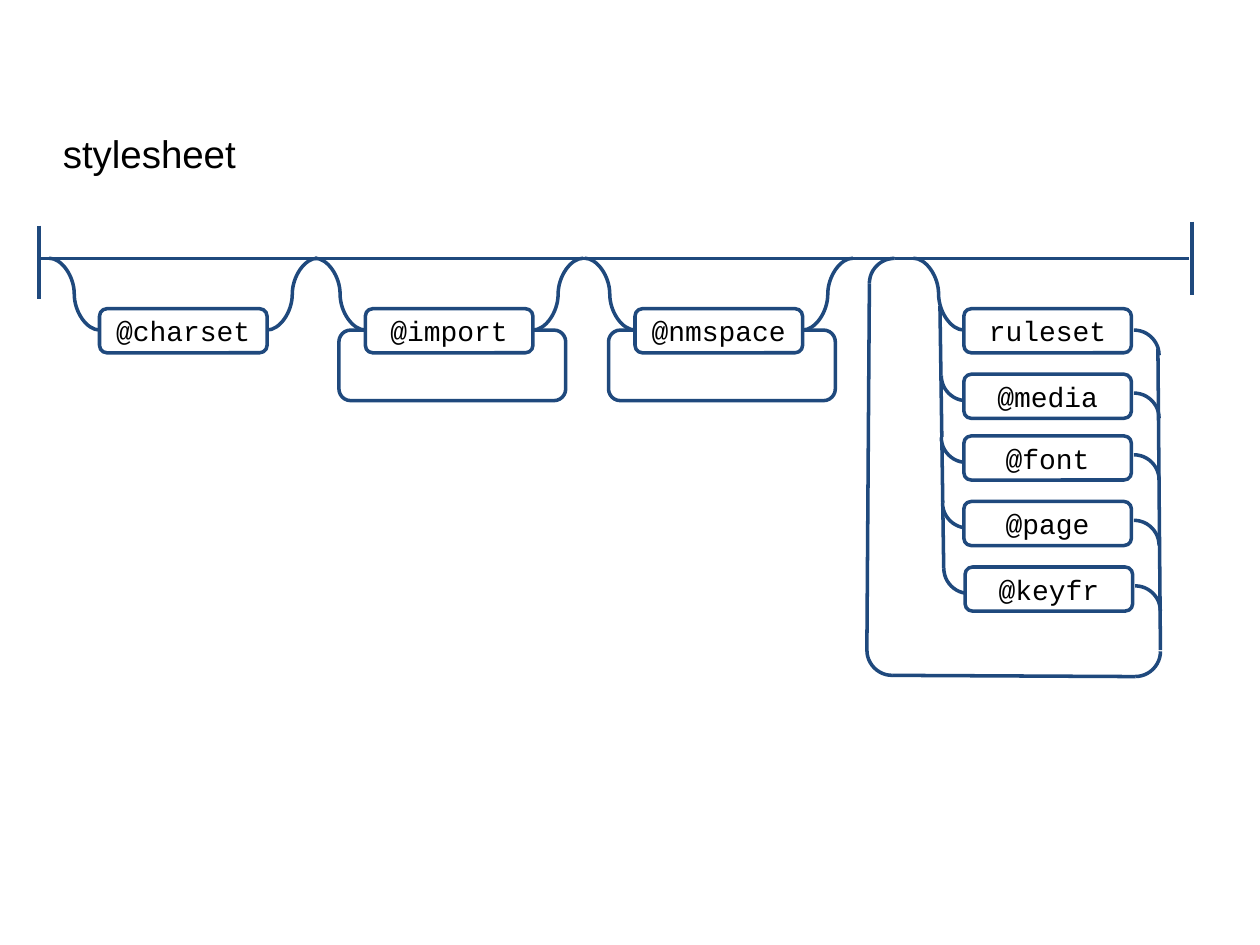
from lxml import etree
from pptx import Presentation
from pptx.dml.color import RGBColor
from pptx.enum.shapes import MSO_CONNECTOR, MSO_SHAPE
from pptx.enum.text import MSO_ANCHOR, MSO_AUTO_SIZE, PP_ALIGN
from pptx.oxml.ns import qn
from pptx.util import Inches, Pt

STRAIGHT, CURVE = MSO_CONNECTOR.STRAIGHT, MSO_CONNECTOR.CURVE
ROUNDED, ARC = MSO_SHAPE.FLOWCHART_ALTERNATE_PROCESS, MSO_SHAPE.ARC
CENTER, MIDDLE = PP_ALIGN.CENTER, MSO_ANCHOR.MIDDLE
FIT_TEXT = MSO_AUTO_SIZE.SHAPE_TO_FIT_TEXT

COLUMNS, ROWS = 100, 75
# Quarter-circle corners, as clockwise turns of the top-right one
TOP_RIGHT, BOTTOM_RIGHT, BOTTOM_LEFT, TOP_LEFT = 0, 90, 180, 270

RAIL, ENTRY = 20.5, 26.2
TERM_TOP, TERM_WIDTH, TERM_HEIGHT = 24.5, 13.3, 3.5
BEND, CORNER = 4, 4


def color(value):
    return RGBColor.from_string(value)


class RailroadDiagram:
    ink, paper, text_color = "1F497D", "FFFFFF", "000000"
    label_font, term_font = "Arial", "Courier New"

    def __init__(self, presentation):
        self.slide = presentation.slides.add_slide(presentation.slide_layouts[6])
        self.cell_width = presentation.slide_width / COLUMNS
        self.cell_height = presentation.slide_height / ROWS

    def place(self, column, row):
        return round(column * self.cell_width), round(row * self.cell_height)

    def style_text(self, paragraph, text, font, size):
        paragraph.text = text
        paragraph.font.name = font
        paragraph.font.size = Pt(size)
        paragraph.font.color.rgb = color(self.text_color)

    def outline(self, kind, left, top, width, height):
        shape = self.slide.shapes.add_shape(
            kind, *self.place(left, top), *self.place(width, height))
        shape.shadow.inherit = False
        shape.fill.solid()
        shape.fill.fore_color.rgb = color(self.paper)
        shape.line.color.rgb = color(self.ink)
        shape.line.width = Pt(2)
        return shape

    def term(self, text, left, top):
        box = self.outline(ROUNDED, left, top, TERM_WIDTH, TERM_HEIGHT)
        box.text_frame.vertical_anchor = MIDDLE
        paragraph = box.text_frame.paragraphs[0]
        paragraph.alignment = CENTER
        self.style_text(paragraph, text, self.term_font, 16)

    def corner(self, turn, left, top):
        self.outline(ARC, left, top, CORNER, CORNER).rotation = turn

    def track(self, start, end, kind=STRAIGHT, weight=2):
        connector = self.slide.shapes.add_connector(
            kind, *self.place(*start), *self.place(*end))
        connector.line.color.rgb = color(self.ink)
        connector.line.width = Pt(weight)
        etree.SubElement(connector._element.spPr, qn("a:effectLst"))

    def branch(self, column, direction):
        """Bend from a term's side up to the rail: -1 leftwards, 1 rightwards."""
        self.track((column, ENTRY), (column + direction * BEND, RAIL), CURVE)

    def optional_term(self, text, left, repeats):
        """Term below the rail that can be skipped and, if it repeats, looped."""
        if repeats:
            self.outline(ROUNDED, left - 2.1, ENTRY, 18, 5.6)
        self.term(text, left, TERM_TOP)
        self.branch(left, -1)
        self.branch(left + TERM_WIDTH, 1)

    def label(self, text, left, top, width, height):
        box = self.slide.shapes.add_textbox(
            *self.place(left, top), *self.place(width, height))
        box.text_frame.word_wrap = True
        box.text_frame.auto_size = FIT_TEXT
        self.style_text(box.text_frame.paragraphs[0], text, self.label_font, 22)


def main():
    presentation = Presentation()
    presentation.slide_width, presentation.slide_height = Inches(10), Inches(7.5)
    diagram = RailroadDiagram(presentation)

    diagram.label("stylesheet", 4, 9.8, 58.9, 4.7)

    for text, left, repeats in (
        ("@charset", 7.9, False),
        ("@import", 29, True),
        ("@nmspace", 50.4, True),
    ):
        diagram.optional_term(text, left, repeats)

    diagram.track((3.1, RAIL), (94.4, RAIL), weight=1.5)
    for column, top in ((3.1, 17.9), (94.6, 17.6)):
        diagram.track((column, top), (column, top + 5.8))

    # Choice of body statements, each entered from the left stem
    diagram.track((74.6, 24.3), (74.9, 45.1))
    diagram.branch(76.5, -1)
    diagram.term("ruleset", 76.5, TERM_TOP)
    diagram.corner(TOP_RIGHT, 88, ENTRY)
    for text, left, top, entry in (
        ("@media", 76.5, 29.7, 74.7),
        ("@font", 76.5, 34.6, 74.7),
        ("@page", 76.5, 39.8, 74.8),
        ("@keyfr", 76.6, 45, 74.9),
    ):
        diagram.corner(BOTTOM_LEFT, entry, top - 1.9)
        diagram.term(text, left, top)
        diagram.corner(TOP_RIGHT, left + 11.5, top + 1.5)

    # Way back from the choice to the rail
    diagram.track((91.9, 27.7), (92.1, 51.6))
    diagram.corner(BOTTOM_RIGHT, 88.1, 49.7)
    diagram.track((90.1, 53.7), (70.8, 53.6))
    diagram.corner(BOTTOM_LEFT, 68.8, 49.6)
    diagram.track((68.8, 51.6), (69, 22.5))
    diagram.corner(TOP_LEFT, 69, RAIL)

    presentation.save("out.pptx")


if __name__ == "__main__":
    main()
